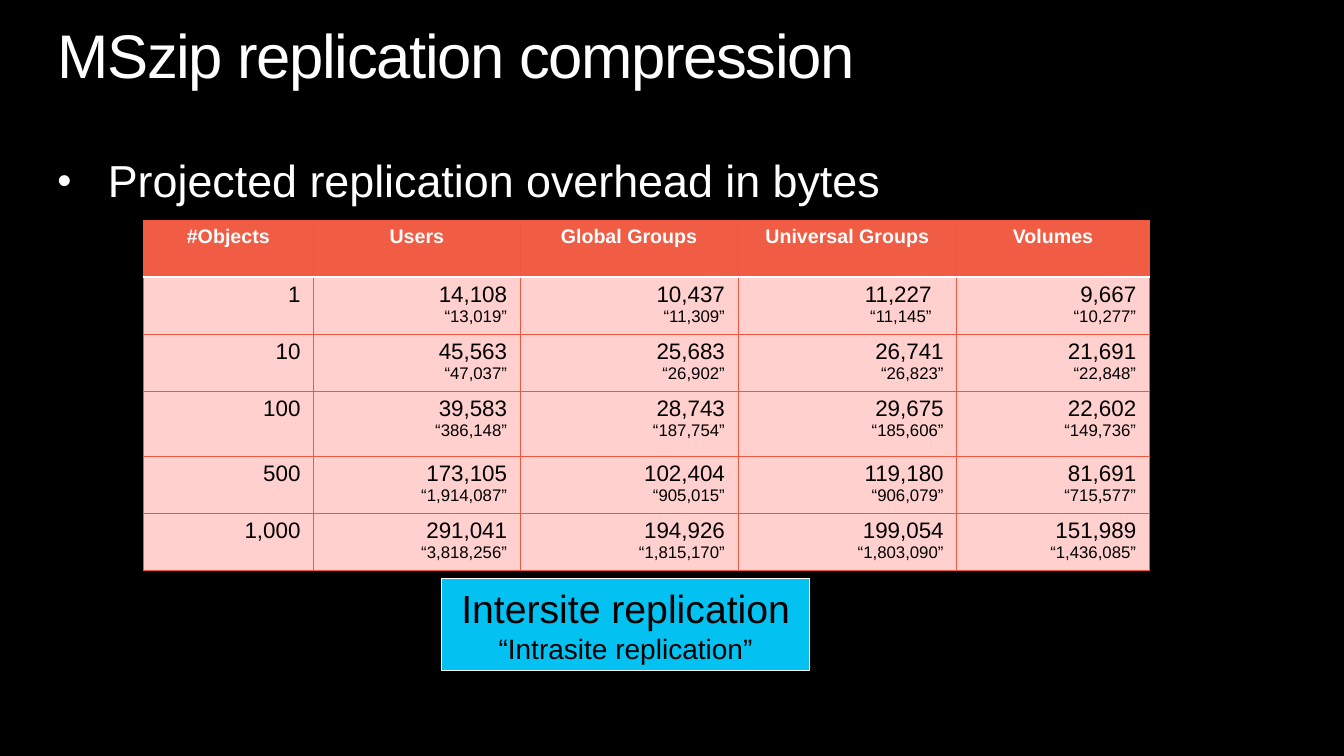
from dataclasses import dataclass
from lxml.etree import SubElement
from pptx import Presentation
from pptx.dml.color import RGBColor
from pptx.enum.shapes import MSO_SHAPE
from pptx.enum.text import MSO_ANCHOR, PP_ALIGN
from pptx.oxml.ns import qn
from pptx.util import Inches, Pt


@dataclass(frozen=True)
class Theme:
    font: str = "Arial"
    black: str = "000000"
    white: str = "FFFFFF"
    header: str = "F15C44"
    body: str = "FFD0CE"
    border: str = "F0573E"
    callout: str = "03C2F1"
    title_size: int = 44
    bullet_size: int = 32
    callout_size: int = 28
    subcallout_size: int = 20
    header_size: int = 14
    value_size: int = 16
    quoted_size: int = 12


THEME = Theme()
BLANK_LAYOUT = 6
COLUMN_WIDTHS = [1.69, 2.05, 2.16, 2.17, 1.91]
ROW_HEIGHTS = [0.56, 0.56, 0.56, 0.64, 0.56, 0.56]
HEADERS = ["#Objects", "Users", "Global Groups", "Universal Groups", "Volumes"]
ROWS = [
    ["1", "14,108 13,019", "10,437 11,309", "11,227 11,145", "9,667 10,277"],
    ["10", "45,563 47,037", "25,683 26,902", "26,741 26,823", "21,691 22,848"],
    ["100", "39,583 386,148", "28,743 187,754", "29,675 185,606", "22,602 149,736"],
    ["500", "173,105 1,914,087", "102,404 905,015", "119,180 906,079", "81,691 715,577"],
    ["1,000", "291,041 3,818,256", "194,926 1,815,170", "199,054 1,803,090",
     "151,989 1,436,085"],
]


def set_attrs(obj, values):
    for name, value in values.items():
        setattr(obj, name, value)


def paint(fill, color):
    fill.solid()
    fill.fore_color.rgb = RGBColor.from_string(color)


def write_lines(tf, lines, color, align, bold=False):
    for i, (text, size) in enumerate(lines):
        p = tf.add_paragraph() if i else tf.paragraphs[0]
        p.alignment = align
        r = p.add_run()
        r.text = text
        set_attrs(r.font, {"name": THEME.font, "size": Pt(size), "bold": bold})
        r.font.color.rgb = RGBColor.from_string(color)


def add_text(s, top, height, text, size):
    box = s.shapes.add_textbox(Inches(0.57), Inches(top), Inches(12.19), Inches(height))
    tf = box.text_frame
    set_attrs(tf, {"word_wrap": True, "margin_left": 0, "margin_right": 0,
                   "margin_top": 0, "margin_bottom": 0})
    write_lines(tf, [(text, size)], THEME.white, PP_ALIGN.LEFT)
    p = tf.paragraphs[0]
    p.line_spacing = 0.9
    return p


def add_bullet(p):
    pPr = p._p.get_or_add_pPr()
    pPr.set("marL", str(Inches(0.5)))
    pPr.set("indent", str(Inches(-0.5)))
    SubElement(pPr, qn("a:buSzPct"), val="90000")
    SubElement(pPr, qn("a:buFont"), typeface=THEME.font)
    SubElement(pPr, qn("a:buChar"), char="•")


def add_border(cell, side, color, width):
    ln = SubElement(cell._tc.get_or_add_tcPr(), qn(f"a:ln{side}"), w=str(Pt(width)))
    fill = SubElement(ln, qn("a:solidFill"))
    SubElement(fill, qn("a:srgbClr"), val=color)


def format_cell(cell, row):
    set_attrs(cell, {"margin_left": Inches(0.13), "margin_right": Inches(0.13),
                     "margin_top": Inches(0.05), "margin_bottom": Inches(0.05),
                     "vertical_anchor": MSO_ANCHOR.TOP})
    for side in "LRTB":
        under_header = (row, side) in [(0, "B"), (1, "T")]
        add_border(cell, side, *((THEME.white, 2) if under_header else (THEME.border, 0.75)))
    paint(cell.fill, THEME.body if row else THEME.header)


def add_overhead_table(s):
    frame = s.shapes.add_table(len(ROW_HEIGHTS), len(COLUMN_WIDTHS), Inches(1.42), Inches(2.19),
                               Inches(sum(COLUMN_WIDTHS)), Inches(sum(ROW_HEIGHTS)))
    table = frame.table
    set_attrs(table, {"first_row": False, "horz_banding": False})
    for column, width in zip(table.columns, COLUMN_WIDTHS):
        column.width = Inches(width)
    for row, height in zip(table.rows, ROW_HEIGHTS):
        row.height = Inches(height)
    for c, header in enumerate(HEADERS):
        cell = table.cell(0, c)
        format_cell(cell, 0)
        write_lines(cell.text_frame, [(header, THEME.header_size)], THEME.white,
                    PP_ALIGN.CENTER, True)
    for r, values in enumerate(ROWS, 1):
        for c, value in enumerate(values):
            cell = table.cell(r, c)
            format_cell(cell, r)
            intersite, *intrasite = value.split()
            lines = [(intersite, THEME.value_size)]
            lines += [(f"“{number}”", THEME.quoted_size) for number in intrasite]
            write_lines(cell.text_frame, lines, THEME.black, PP_ALIGN.RIGHT)
    shifted = table.cell(1, 3).text_frame.paragraphs[0]
    shifted._p.get_or_add_pPr().set("marR", str(Inches(0.12)))


def add_callout(s):
    sp = s.shapes.add_shape(MSO_SHAPE.RECTANGLE, Inches(4.38), Inches(5.74),
                            Inches(3.65), Inches(0.91))
    sp.shadow.inherit = False
    paint(sp.fill, THEME.callout)
    paint(sp.line.fill, THEME.white)
    sp.line.width = Pt(1)
    set_attrs(sp.text_frame, {"word_wrap": True, "vertical_anchor": MSO_ANCHOR.MIDDLE})
    write_lines(sp.text_frame, [("Intersite replication", THEME.callout_size),
                                ("“Intrasite replication”", THEME.subcallout_size)],
                THEME.black, PP_ALIGN.CENTER)


def main():
    prs = Presentation()
    set_attrs(prs, {"slide_width": Inches(13.33), "slide_height": Inches(7.5)})
    s = prs.slides.add_slide(prs.slide_layouts[BLANK_LAYOUT])
    paint(s.background.fill, THEME.black)
    title = add_text(s, 0.25, 0.67, "MSzip replication compression", THEME.title_size)
    title.runs[0].font._element.set("spc", "-100")
    add_bullet(add_text(s, 1.58, 0.5, "Projected replication overhead in bytes",
                        THEME.bullet_size))
    add_overhead_table(s)
    add_callout(s)
    prs.save("out.pptx")


if __name__ == "__main__":
    main()
